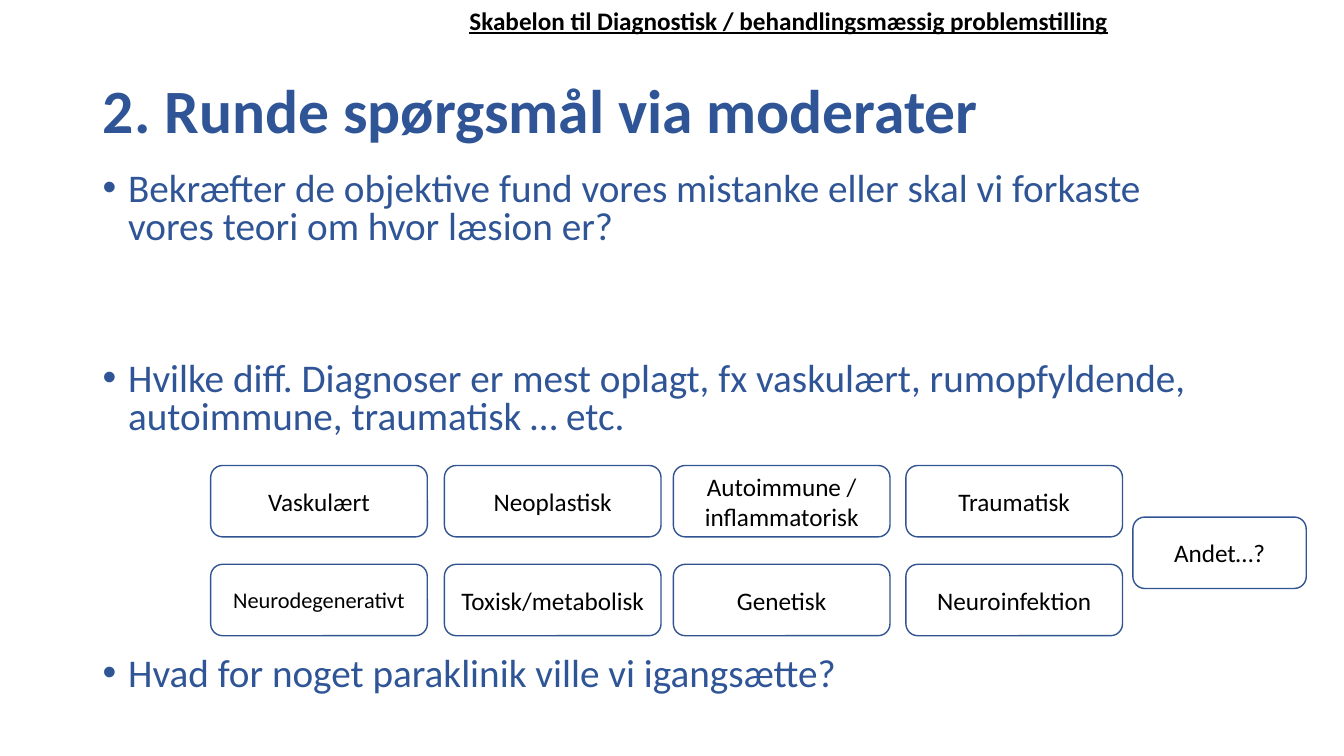
from dataclasses import dataclass

from lxml.etree import SubElement
from pptx import Presentation
from pptx.dml.color import RGBColor
from pptx.enum.shapes import MSO_SHAPE as Preset
from pptx.enum.text import MSO_ANCHOR as Anchor, MSO_AUTO_SIZE as AutoSize, PP_ALIGN as Align
from pptx.oxml.ns import qn
from pptx.shapes.autoshape import Shape
from pptx.slide import Slide
from pptx.text.text import Font, _Paragraph as Paragraph
from pptx.util import Cm, Pt


@dataclass(frozen=True)
class Theme:
    font: str = "Calibri"
    blue: RGBColor = RGBColor(0x2F, 0x55, 0x97)
    outline: RGBColor = RGBColor(0x32, 0x54, 0x91)
    black: RGBColor = RGBColor(0, 0, 0)
    title_size: int = 44
    body_size: int = 28
    label_size: int = 18
    small_label_size: int = 16


THEME = Theme()


@dataclass(frozen=True)
class Question:
    text: str
    space_before: int


@dataclass(frozen=True)
class Diagnosis:
    text: str
    left: float
    top: float
    width: float = 5.46
    size: int = THEME.label_size


BOX_HEIGHT = 1.8
COLUMNS = (5.31, 11.2, 16.97, 22.83)
ROWS = (11.73, 14.22)
SMALL_LABELS = {"Neurodegenerativt"}
GRID = (
    ("Vaskulært", "Neoplastisk", "Autoimmune / inflammatorisk", "Traumatisk"),
    ("Neurodegenerativt", "Toxisk/metabolisk", "Genetisk", "Neuroinfektion"),
)
DIAGNOSES = [
    Diagnosis(
        text, left, top,
        size=THEME.small_label_size if text in SMALL_LABELS else THEME.label_size,
    )
    for top, labels in zip(ROWS, GRID)
    for left, text in zip(COLUMNS, labels)
] + [Diagnosis("Andet…?", 28.55, 13.03, width=4.37)]

QUESTIONS = (
    Question("Bekræfter de objektive fund vores mistanke eller skal vi forkaste "
             "vores teori om hvor læsion er?", 10),
    Question("Hvilke diff. Diagnoser er mest oplagt, fx vaskulært, rumopfyldende, "
             "autoimmune, traumatisk … etc.", 82),
    Question("Hvad for noget paraklinik ville vi igangsætte?", 157),
)


def set_font(font: Font, size: int, color: RGBColor, bold: bool = False) -> None:
    font.name = THEME.font
    font.size = Pt(size)
    font.color.rgb = color
    font.bold = bold


def add_bullet(paragraph: Paragraph) -> None:
    properties = paragraph._p.get_or_add_pPr()
    properties.set("marL", str(Cm(0.64)))
    properties.set("indent", str(-Cm(0.64)))
    SubElement(properties, qn("a:buFont")).set("typeface", "Arial")
    SubElement(properties, qn("a:buChar")).set("char", "•")


def format_title(slide: Slide) -> None:
    title = slide.shapes.title
    title.left, title.top, title.width, title.height = Cm(2.34), Cm(1.02), Cm(29.21), Cm(3.68)
    frame = title.text_frame
    frame.text = "2. Runde spørgsmål via moderater"
    frame.auto_size = AutoSize.NONE
    frame.vertical_anchor = Anchor.MIDDLE
    paragraph = frame.paragraphs[0]
    paragraph.alignment = Align.LEFT
    paragraph.line_spacing = 0.9
    set_font(paragraph.font, THEME.title_size, THEME.blue, bold=True)


def add_questions(slide: Slide) -> None:
    frame = slide.shapes.add_textbox(Cm(2.34), Cm(4.22), Cm(28.68), Cm(14.53)).text_frame
    frame.word_wrap = True
    for index, question in enumerate(QUESTIONS):
        paragraph = frame.add_paragraph() if index else frame.paragraphs[0]
        paragraph.text = question.text
        paragraph.line_spacing = 0.8
        paragraph.space_before = Pt(question.space_before)
        set_font(paragraph.font, THEME.body_size, THEME.blue)
        add_bullet(paragraph)


def add_header(slide: Slide) -> None:
    frame = slide.shapes.add_textbox(Cm(11.58), 0, Cm(16.71), Cm(1.02)).text_frame
    frame.word_wrap = False
    frame.auto_size = AutoSize.SHAPE_TO_FIT_TEXT
    paragraph = frame.paragraphs[0]
    paragraph.text = "Skabelon til Diagnostisk / behandlingsmæssig problemstilling"
    set_font(paragraph.font, THEME.label_size, THEME.black, bold=True)
    paragraph.font.underline = True


def add_diagnosis(slide: Slide, diagnosis: Diagnosis) -> Shape:
    shape = slide.shapes.add_shape(
        Preset.ROUNDED_RECTANGLE, Cm(diagnosis.left), Cm(diagnosis.top),
        Cm(diagnosis.width), Cm(BOX_HEIGHT),
    )
    shape.shadow.inherit = False
    shape.fill.background()
    shape.line.color.rgb = THEME.outline
    shape.line.width = Pt(1)
    frame = shape.text_frame
    frame.word_wrap = True
    frame.vertical_anchor = Anchor.MIDDLE
    paragraph = frame.paragraphs[0]
    paragraph.text = diagnosis.text
    paragraph.alignment = Align.CENTER
    set_font(paragraph.font, diagnosis.size, THEME.black)
    return shape


def main() -> None:
    presentation = Presentation()
    presentation.slide_width, presentation.slide_height = Cm(33.87), Cm(19.05)
    slide = presentation.slides.add_slide(presentation.slide_layouts.get_by_name("Title Only"))
    format_title(slide)
    add_questions(slide)
    add_header(slide)
    for diagnosis in DIAGNOSES:
        add_diagnosis(slide, diagnosis)
    presentation.save("out.pptx")


if __name__ == "__main__":
    main()
